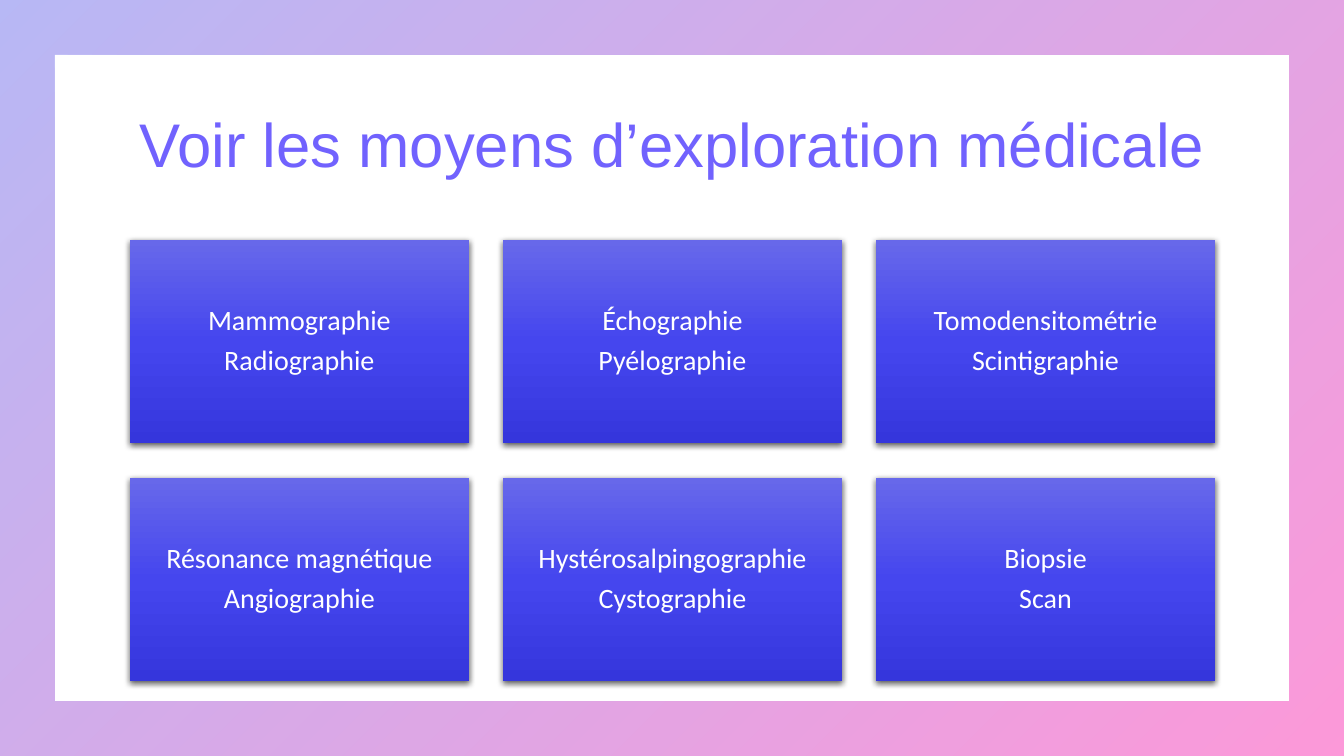
from dataclasses import dataclass

from lxml import etree
from pptx import Presentation
from pptx.dml.color import RGBColor
from pptx.enum.shapes import MSO_SHAPE
from pptx.enum.text import MSO_ANCHOR, PP_ALIGN
from pptx.oxml.ns import qn
from pptx.util import Inches, Pt

FRAME = MSO_SHAPE.FRAME
RECTANGLE = MSO_SHAPE.RECTANGLE
MIDDLE = MSO_ANCHOR.MIDDLE
CENTER = PP_ALIGN.CENTER


@dataclass(frozen=True)
class GradientStop:
    position: int
    color: str
    opacity: int = 100


@dataclass(frozen=True)
class Theme:
    background: str = "FFFFFF"
    title_color: str = "7162FE"
    card_text_color: str = "FFFFFF"
    shadow_color: str = "000000"
    title_font: str = "Arial"
    card_font: str = "Calibri"
    title_size: int = 44
    card_size: int = 20
    frame_stops: tuple[GradientStop, ...] = (
        GradientStop(0, "4D4EE6", 40),
        GradientStop(100, "F900A0", 40),
    )
    card_stops: tuple[GradientStop, ...] = (
        GradientStop(0, "6768EA"),
        GradientStop(50, "4546EE"),
        GradientStop(100, "3536DC"),
    )


@dataclass(frozen=True)
class Card:
    lines: tuple[str, str]
    column: int
    row: int


THEME = Theme()
SLIDE_WIDTH, SLIDE_HEIGHT = 13.33, 7.5
GRID_LEFT, GRID_TOP = 1.29, 2.38
CARD_WIDTH, CARD_HEIGHT = 3.36, 2.02
CARD_GAP = 0.34
COLUMNS = 3

EXAMINATIONS = (
    ("Mammographie", "Radiographie"),
    ("Échographie", "Pyélographie"),
    ("Tomodensitométrie", "Scintigraphie"),
    ("Résonance magnétique", "Angiographie"),
    ("Hystérosalpingographie", "Cystographie"),
    ("Biopsie", "Scan"),
)
CARDS = [Card(lines, index % COLUMNS, index // COLUMNS) for index, lines in enumerate(EXAMINATIONS)]


def add_color(parent, color: str, opacity: int) -> None:
    color_element = etree.SubElement(parent, qn("a:srgbClr"), val=color)
    if opacity < 100:
        etree.SubElement(color_element, qn("a:alpha"), val=str(opacity * 1000))


def fill_gradient(shape, stops: tuple[GradientStop, ...], angle: int) -> None:
    """Fill a shape with a linear gradient, its angle measured clockwise."""
    shape.fill.gradient()
    gradient = shape.element.spPr.find(qn("a:gradFill"))
    for child in list(gradient):
        gradient.remove(child)
    stop_list = etree.SubElement(gradient, qn("a:gsLst"))
    for stop in stops:
        stop_element = etree.SubElement(stop_list, qn("a:gs"), pos=str(stop.position * 1000))
        add_color(stop_element, stop.color, stop.opacity)
    etree.SubElement(gradient, qn("a:lin"), ang=str(angle * 60000), scaled="0")


def add_soft_shadow(shape) -> None:
    effects = shape.element.spPr.find(qn("a:effectLst"))
    shadow = etree.SubElement(
        effects, qn("a:outerShdw"), blurRad=str(Pt(4.5)), dist=str(Pt(1.5)),
        dir="5400000", algn="ctr", rotWithShape="0",
    )
    add_color(shadow, THEME.shadow_color, 63)


def add_plain_shape(slide, kind, left: float, top: float, width: float, height: float):
    shape = slide.shapes.add_shape(kind, Inches(left), Inches(top), Inches(width), Inches(height))
    shape.shadow.inherit = False
    shape.line.fill.background()
    return shape


def write_text(text_frame, text: str, font_name: str, size: int, color: str, space_after: float = 0) -> None:
    text_frame.word_wrap = True
    text_frame.vertical_anchor = MIDDLE
    text_frame.text = text
    for paragraph in text_frame.paragraphs:
        paragraph.alignment = CENTER
        paragraph.line_spacing = 0.9
        paragraph.space_after = Pt(space_after)
        for run in paragraph.runs:
            run.font.name = font_name
            run.font.size = Pt(size)
            run.font.color.rgb = RGBColor.from_string(color)


def add_frame(slide) -> None:
    frame = add_plain_shape(slide, FRAME, 0, 0, SLIDE_WIDTH, SLIDE_HEIGHT)
    frame.adjustments[0] = 0.072
    fill_gradient(frame, THEME.frame_stops, 45)


def add_title(slide) -> None:
    title = slide.shapes.add_textbox(Inches(0.92), Inches(0.74), Inches(11.5), Inches(1.45))
    write_text(title.text_frame, "Voir les moyens d’exploration médicale",
               THEME.title_font, THEME.title_size, THEME.title_color)


def add_card(slide, card: Card) -> None:
    left = GRID_LEFT + card.column * (CARD_WIDTH + CARD_GAP)
    top = GRID_TOP + card.row * (CARD_HEIGHT + CARD_GAP)
    shape = add_plain_shape(slide, RECTANGLE, left, top, CARD_WIDTH, CARD_HEIGHT)
    fill_gradient(shape, THEME.card_stops, 90)
    add_soft_shadow(shape)
    text_frame = shape.text_frame
    text_frame.margin_left = text_frame.margin_right = Inches(0.08)
    text_frame.margin_top = text_frame.margin_bottom = Inches(0.08)
    write_text(text_frame, "\n".join(card.lines), THEME.card_font, THEME.card_size,
               THEME.card_text_color, space_after=0.35 * THEME.card_size)


def main() -> None:
    presentation = Presentation()
    presentation.slide_width = Inches(SLIDE_WIDTH)
    presentation.slide_height = Inches(SLIDE_HEIGHT)
    slide = presentation.slides.add_slide(presentation.slide_layouts[6])

    # Background and gradient border
    slide.background.fill.solid()
    slide.background.fill.fore_color.rgb = RGBColor.from_string(THEME.background)
    add_frame(slide)

    # Heading
    add_title(slide)

    # Grid of examinations
    for card in CARDS:
        add_card(slide, card)

    presentation.save("out.pptx")


if __name__ == "__main__":
    main()
